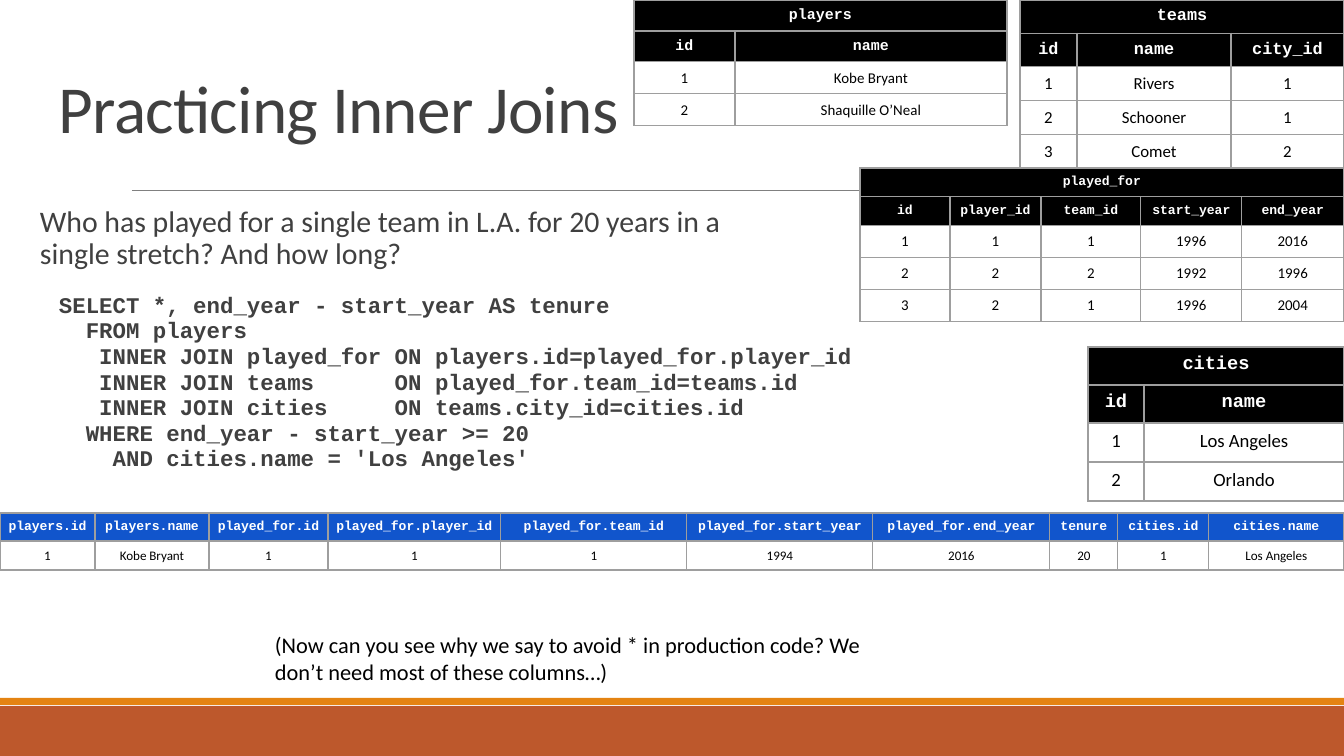
import copy

import pptx
import pptx.dml.color
import pptx.enum.shapes
import pptx.enum.text
import pptx.oxml
import pptx.oxml.ns
import pptx.util
from lxml import etree

EMU_PER_PX = 914400 / 134.4
SANS, MONO = "Calibri", "Courier New"
BLACK, WHITE, GREY = "000000", "FFFFFF", "404040"
BLUE, BORDER = "1155CC", "9E9E9E"

QUERY = """SELECT *, end_year - start_year AS tenure
  FROM players
   INNER JOIN played_for ON players.id=played_for.player_id
   INNER JOIN teams      ON played_for.team_id=teams.id
   INNER JOIN cities     ON teams.city_id=cities.id
  WHERE end_year - start_year >= 20
    AND cities.name = 'Los Angeles'"""


def px(n):
    return round(n * EMU_PER_PX)


def color(value):
    return pptx.dml.color.RGBColor.from_string(value)


def qn(tag):
    return pptx.oxml.ns.qn(tag)


class Deck:
    def __init__(self, width, height):
        self.prs = pptx.Presentation()
        self.prs.slide_width, self.prs.slide_height = px(width), px(height)
        self.s = self.prs.slides.add_slide(self.prs.slide_layouts[6])

    def bar(self, x, y, w, h, fill):
        rect = pptx.enum.shapes.MSO_SHAPE.RECTANGLE
        sp = self.s.shapes.add_shape(rect, px(x), px(y), px(w), px(h))
        sp.shadow.inherit = False
        sp.fill.solid()
        sp.fill.fore_color.rgb = color(fill)
        sp.line.fill.background()

    def rule(self, x1, x2, y, stroke, weight):
        """Draw a horizontal line."""
        straight = pptx.enum.shapes.MSO_CONNECTOR.STRAIGHT
        cx = self.s.shapes.add_connector(straight, px(x1), px(y), px(x2), px(y))
        cx.line.color.rgb = color(stroke)
        cx.line.width = pptx.util.Pt(weight)
        etree.SubElement(cx._element.spPr, qn("a:effectLst"))

    def style(self, p, size, font, fill, bold=False, tracking=None):
        """Format the runs of a paragraph, and its line breaks alike."""
        for r in p.runs:
            r.font.size = pptx.util.Pt(size)
            r.font.name = font
            r.font.bold = bold
            r.font.color.rgb = color(fill)
            if tracking is not None:
                r.font._element.set("spc", str(round(tracking * 100)))
        for br in p._p.findall(qn("a:br")):
            br.insert(0, copy.deepcopy(p.runs[0].font._element))

    def text(self, x, y, w, h, text, size, font=SANS, fill=GREY,
             spacing=None, **look):
        sp = self.s.shapes.add_textbox(px(x), px(y), px(w), px(h))
        tf = sp.text_frame
        tf.word_wrap = True
        tf.margin_left = tf.margin_right = px(13)
        tf.margin_top = tf.margin_bottom = px(13)
        p = tf.paragraphs[0]
        p.text = text
        p.line_spacing = spacing
        self.style(p, size, font, fill, **look)

    def cell(self, cell, text, is_head, size, head_fill):
        cell.margin_left = cell.margin_right = cell.margin_top = px(7)
        cell.margin_bottom = px(6)
        if is_head:
            cell.fill.solid()
            cell.fill.fore_color.rgb = color(head_fill)
        else:
            cell.fill.background()
        for i, side in enumerate(("lnL", "lnR", "lnT", "lnB")):
            cell._tc.get_or_add_tcPr().insert(i, pptx.oxml.parse_xml(
                f'<a:{side} {pptx.oxml.ns.nsdecls("a")} w="9525"><a:solidFill>'
                f'<a:srgbClr val="{BORDER}"/></a:solidFill></a:{side}>'))
        p = cell.text_frame.paragraphs[0]
        p.text = text
        p.alignment = pptx.enum.text.PP_ALIGN.CENTER
        if is_head:
            self.style(p, size, MONO, WHITE, bold=True)
        else:
            self.style(p, size, SANS, BLACK)

    def table(self, x, y, widths, heights, columns, records, sizes,
              title=None, head_fill=BLACK):
        """Draw a relation; sizes are the header and the record text sizes."""
        heads = [columns]
        if title:
            heads.insert(0, [title] + [""] * (len(columns) - 1))
        rows = heads + records
        frame = self.s.shapes.add_table(len(rows), len(columns), px(x), px(y),
                                        px(sum(widths)), px(sum(heights)))
        tbl = frame.table
        tbl.first_row = tbl.horz_banding = False
        for column, width in zip(tbl.columns, widths):
            column.width = px(width)
        for row, height in zip(tbl.rows, heights):
            row.height = px(height)
        for i, values in enumerate(rows):
            is_head = i < len(heads)
            for j, value in enumerate(values):
                self.cell(tbl.cell(i, j), value, is_head,
                          sizes[0] if is_head else sizes[1], head_fill)
        if title:
            tbl.cell(0, 0).merge(tbl.cell(0, len(columns) - 1))


def main():
    deck = Deck(1344, 756)
    deck.bar(0, 706, 1344, 50, "BD582C")
    deck.bar(0, 698, 1344, 7, "E48312")
    deck.rule(132, 1230, 191, "808080", 0.5)

    deck.table(
        0, 513, [95, 114, 119, 173, 186, 186, 177, 68, 91, 135], [28, 29],
        ["players.id", "players.name", "played_for.id", "played_for.player_id",
         "played_for.team_id", "played_for.start_year", "played_for.end_year",
         "tenure", "cities.id", "cities.name"],
        [["1", "Kobe Bryant", "1", "1", "1", "1994", "2016", "20", "1",
          "Los Angeles"]],
        (7, 7), head_fill=BLUE)

    deck.text(46, 66, 1253, 85, "Practicing Inner Joins", 36,
              spacing=0.85, tracking=-0.4)
    deck.text(27, 194, 728, 91,
              "Who has played for a single team in L.A. for 20 years in a "
              "single stretch? And how long?", 16, spacing=0.9)
    deck.text(46, 280, 852, 191, QUERY, 12, font=MONO, spacing=0.95, bold=True)

    deck.table(1020, 0, [57, 154, 113], [32, 32, 34, 34, 34],
               ["id", "name", "city_id"],
               [["1", "Rivers", "1"], ["2", "Schooner", "1"],
                ["3", "Comet", "2"]],
               (9, 9), title="teams")
    deck.table(1088, 347, [56, 200], [38, 38, 39, 39], ["id", "name"],
               [["1", "Los Angeles"], ["2", "Orlando"]],
               (10, 10), title="cities")
    deck.table(634, 0, [101, 272], [30, 30, 32, 32], ["id", "name"],
               [["1", "Kobe Bryant"], ["2", "Shaquille O’Neal"]],
               (8, 8), title="players")
    deck.table(860, 168, [90, 91, 100, 101, 102], [28, 28, 32, 32, 32],
               ["id", "player_id", "team_id", "start_year", "end_year"],
               [["1", "1", "1", "1996", "2016"],
                ["2", "2", "2", "1992", "1996"],
                ["3", "2", "1", "1996", "2004"]],
               (7, 8), title="played_for")

    deck.text(262, 618, 616, 114,
              "(Now can you see why we say to avoid * in production code? "
              "We don’t need most of these columns…)", 12, fill=BLACK)
    deck.prs.save("out.pptx")


if __name__ == "__main__":
    main()
